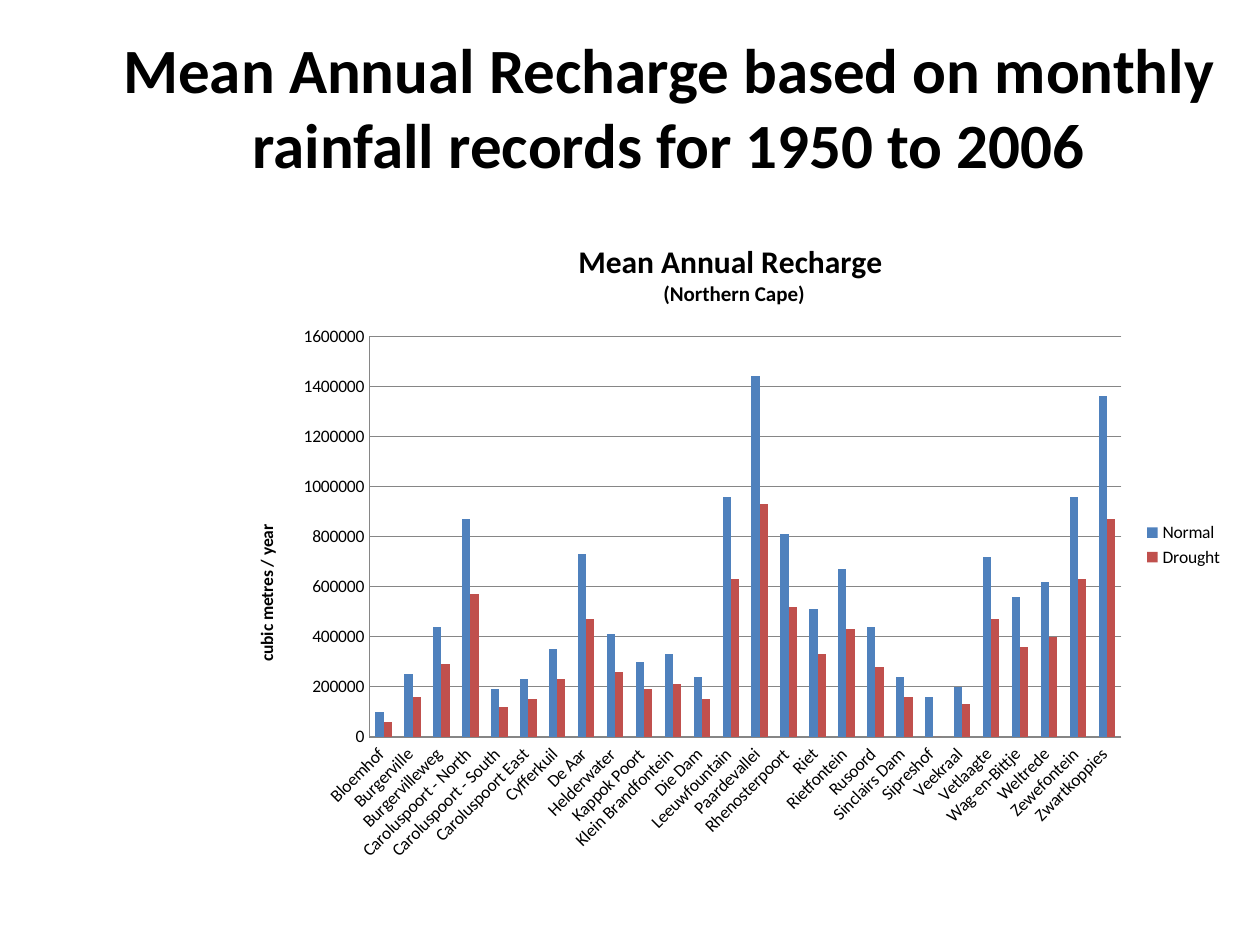
import typing

import lxml.etree
import pptx
import pptx.chart.data
import pptx.dml.color
import pptx.enum.chart
import pptx.enum.text
import pptx.oxml.ns
import pptx.util

Inches = pptx.util.Inches
Pt = pptx.util.Pt
RGBColor = pptx.dml.color.RGBColor
qn = pptx.oxml.ns.qn

BLACK = RGBColor(0x00, 0x00, 0x00)
GRID_GREY = RGBColor(0x86, 0x86, 0x86)
NORMAL_BLUE = RGBColor(0x4F, 0x81, 0xBD)
DROUGHT_RED = RGBColor(0xC0, 0x50, 0x4D)
FONT = "Calibri"
CHART_WIDTH = Inches(7.98)
CHART_HEIGHT = Inches(5.21)


class Recharge(typing.NamedTuple):
    condition: str
    color: RGBColor
    thousands: list[int]


class Heading(typing.NamedTuple):
    text: str
    size: int


FARMS = [
    "Bloemhof ", "Burgerville ", "Burgervilleweg ", "Caroluspoort - North ",
    "Caroluspoort - South ", "Caroluspoort East ", "Cyfferkuil ", "De Aar ",
    "Helderwater ", "Kappok Poort ", "Klein Brandfontein ", "Die Dam ",
    "Leeuwfountain ", "Paardevallei ", "Rhenosterpoort ", "Riet ", "Rietfontein ",
    "Rusoord ", "Sinclairs Dam ", "Sipreshof ", "Veekraal ", "Vetlaagte ",
    "Wag-en-Bittje ", "Weltrede ", "Zewefontein ", "Zwartkoppies ",
]
RECHARGES = [
    Recharge("Normal", NORMAL_BLUE, [
        100, 250, 440, 870, 190, 230, 350, 730, 410, 300, 330, 240, 960,
        1440, 810, 510, 670, 440, 240, 160, 200, 720, 560, 620, 960, 1360]),
    Recharge("Drought", DROUGHT_RED, [
        60, 160, 290, 570, 120, 150, 230, 470, 260, 190, 210, 150, 630,
        930, 520, 330, 430, 280, 160, 0, 130, 470, 360, 400, 630, 870]),
]


def style_font(font: typing.Any, size: int, bold: bool) -> None:
    font.name = FONT
    font.size = Pt(size)
    font.bold = bold
    font.color.rgb = BLACK


def write_headings(frame: typing.Any, headings: list[Heading]) -> None:
    for index, heading in enumerate(headings):
        paragraph = frame.add_paragraph() if index else frame.paragraphs[0]
        paragraph.text = heading.text
        style_font(paragraph.font, heading.size, True)


def place(element: typing.Any, index: int, **lengths: int) -> None:
    layout = element.find(qn("c:layout"))
    if layout is None:
        layout = lxml.etree.Element(qn("c:layout"))
        element.insert(index, layout)
    manual = lxml.etree.SubElement(layout, qn("c:manualLayout"))
    extents = {"x": CHART_WIDTH, "y": CHART_HEIGHT, "w": CHART_WIDTH, "h": CHART_HEIGHT}
    settings = {"xMode": "edge", "yMode": "edge"}
    settings.update({side: length / extents[side] for side, length in lengths.items()})
    if "w" in lengths:
        settings = {"layoutTarget": "inner", **settings}
    for tag, value in settings.items():
        lxml.etree.SubElement(manual, qn(f"c:{tag}")).set("val", str(value))


def add_recharge_chart(slide: typing.Any) -> None:
    data = pptx.chart.data.CategoryChartData(number_format="General")
    data.categories = FARMS
    for recharge in RECHARGES:
        data.add_series(recharge.condition, [value * 1000 for value in recharge.thousands])
    chart = slide.shapes.add_chart(
        pptx.enum.chart.XL_CHART_TYPE.COLUMN_CLUSTERED,
        Inches(1.83), Inches(1.72), CHART_WIDTH, CHART_HEIGHT, data,
    ).chart
    style_font(chart.font, 10, False)

    write_headings(chart.chart_title.text_frame, [
        Heading("Mean Annual Recharge ", 18), Heading("(Northern Cape)", 12)])
    place(chart.chart_title.element, 1, x=Inches(2.73), y=Inches(0.16))
    chart.has_legend = True
    chart.legend.position = pptx.enum.chart.XL_LEGEND_POSITION.RIGHT
    chart.legend.include_in_layout = False

    plot = chart.plots[0]
    plot.gap_width = 150
    plot.overlap = 0
    plot.vary_by_categories = False
    for series, recharge in zip(plot.series, RECHARGES):
        series.format.fill.solid()
        series.format.fill.fore_color.rgb = recharge.color

    volume_axis = chart.value_axis
    volume_axis.minimum_scale = 0
    volume_axis.maximum_scale = 1600000
    volume_axis.major_unit = 200000
    volume_axis.has_major_gridlines = True
    write_headings(volume_axis.axis_title.text_frame, [Heading("cubic metres / year", 10)])
    place(volume_axis.axis_title.element, 1, x=Inches(0.17), y=Inches(2.42))
    for axis in (chart.category_axis, volume_axis):
        axis.major_tick_mark = pptx.enum.chart.XL_TICK_MARK.NONE
        axis.format.line.color.rgb = GRID_GREY
    volume_axis.major_gridlines.format.line.color.rgb = GRID_GREY

    plot_area = chart.element.find(f"{qn('c:chart')}/{qn('c:plotArea')}")
    place(plot_area, 0, x=Inches(1.1), y=Inches(0.95), w=Inches(5.97), h=Inches(3.18))


def main() -> None:
    presentation = pptx.Presentation()
    presentation.slide_width = Inches(10)
    presentation.slide_height = Inches(7.5)
    slide = presentation.slides.add_slide(presentation.slide_layouts[5])
    add_recharge_chart(slide)

    title = slide.shapes.title
    title.left, title.top = Inches(0.62), Inches(0.19)
    title.width, title.height = Inches(9.38), Inches(1.24)
    title.text_frame.vertical_anchor = pptx.enum.text.MSO_ANCHOR.TOP
    write_headings(title.text_frame, [
        Heading("Mean Annual Recharge based on monthly rainfall records for 1950 to 2006", 36)])
    title.text_frame.paragraphs[0].alignment = pptx.enum.text.PP_ALIGN.CENTER
    presentation.save("out.pptx")


if __name__ == "__main__":
    main()
